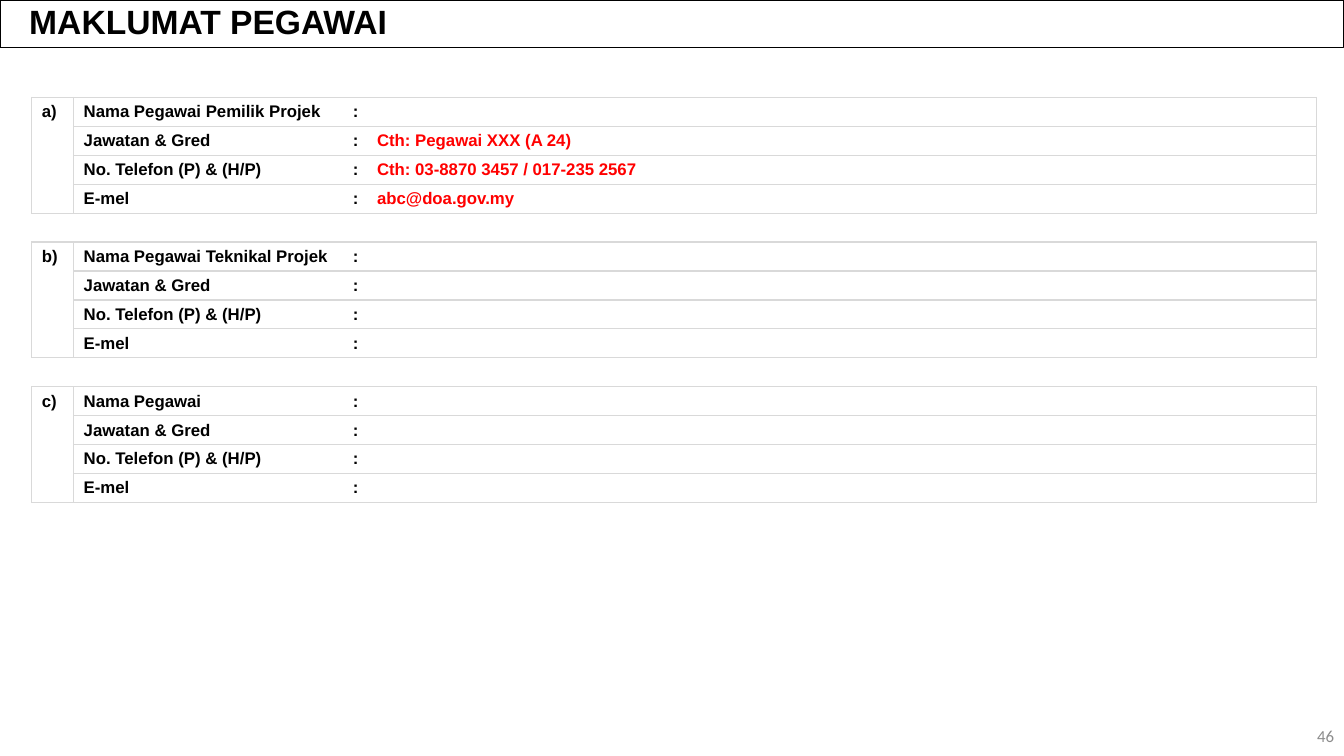
import dataclasses

import pptx
import pptx.dml.color
import pptx.enum.text
import pptx.oxml.ns
import pptx.util
from lxml import etree

Pt = pptx.util.Pt
RGBColor = pptx.dml.color.RGBColor
Align = pptx.enum.text.PP_ALIGN
Anchor = pptx.enum.text.MSO_ANCHOR


@dataclasses.dataclass(frozen=True)
class Theme:
    heading_font: str = "Arial"
    number_font: str = "Calibri"
    title_size: int = 24
    table_size: int = 12
    number_size: int = 12
    black: str = "000000"
    example: str = "FF0000"
    grid: str = "D9D9D9"
    muted: str = "8C8C8C"


THEME = Theme()
SLIDE_WIDTH, SLIDE_HEIGHT = 960, 540
COLUMN_WIDTHS = (29.9, 192.3, 16.6, 678.2)
ROW_HEIGHT = 20.69
OFFICERS = [
    ("a)", "Nama Pegawai Pemilik Projek",
     ("", "Cth: Pegawai XXX (A 24)", "Cth: 03-8870 3457 / 017-235 2567", "abc@doa.gov.my")),
    ("b)", "Nama Pegawai Teknikal Projek", ("",) * 4),
    ("c)", "Nama Pegawai", ("",) * 4),
]
COMMON_LABELS = ("Jawatan & Gred", "No. Telefon (P) & (H/P)", "E-mel")


def set_attributes(target, values):
    for name, value in values.items():
        setattr(target, name, value)


def write_text(paragraph, text, font, size, color, bold=False):
    run = paragraph.add_run()
    run.text = text
    set_attributes(run.font, {"name": font, "size": Pt(size), "bold": bold})
    run.font.color.rgb = RGBColor.from_string(color)


def add_title(slide, left, top, width, height):
    title = slide.shapes.title
    set_attributes(title, {"left": Pt(left), "top": Pt(top),
                           "width": Pt(width), "height": Pt(height)})
    title.line.color.rgb = RGBColor.from_string(THEME.black)
    title.line.width = Pt(0.75)
    set_attributes(title.text_frame, {
        "vertical_anchor": Anchor.MIDDLE, "word_wrap": True,
        "auto_size": pptx.enum.text.MSO_AUTO_SIZE.NONE})
    paragraph = title.text_frame.paragraphs[0]
    set_attributes(paragraph, {"alignment": Align.LEFT, "line_spacing": 0.9})
    paragraph._p.get_or_add_pPr().set("indent", str(Pt(13.7)))
    write_text(paragraph, "MAKLUMAT PEGAWAI", THEME.heading_font,
               THEME.title_size, THEME.black, bold=True)


def add_page_number(slide, left, top, width, height):
    box = slide.shapes.add_textbox(Pt(left), Pt(top), Pt(width), Pt(height))
    set_attributes(box.text_frame, {"word_wrap": True, "vertical_anchor": Anchor.MIDDLE})
    paragraph = box.text_frame.paragraphs[0]
    paragraph.alignment = Align.RIGHT
    write_text(paragraph, "46", THEME.number_font, THEME.number_size, THEME.muted)


def set_borders(cell, sides):
    """Draw the sides named by the letters L, R, T and B, and clear the others."""
    properties = cell._tc.get_or_add_tcPr()
    qn = pptx.oxml.ns.qn
    for side in "LRTB":
        line = etree.SubElement(properties, qn(f"a:ln{side}"), w=str(Pt(1)))
        if side in sides:
            fill = etree.SubElement(line, qn("a:solidFill"))
            etree.SubElement(fill, qn("a:srgbClr"), val=THEME.grid)
        else:
            etree.SubElement(line, qn("a:noFill"))


def fill_cell(cell, text, sides, color):
    set_borders(cell, sides)
    cell.fill.background()
    set_attributes(cell, {"vertical_anchor": Anchor.MIDDLE,
                          "margin_top": Pt(3), "margin_bottom": Pt(3)})
    paragraph = cell.text_frame.paragraphs[0]
    if text:
        write_text(paragraph, text, THEME.heading_font, THEME.table_size, color, bold=True)
    else:
        end = etree.SubElement(paragraph._p, pptx.oxml.ns.qn("a:endParaRPr"),
                               sz=str(THEME.table_size * 100))
        etree.SubElement(end, pptx.oxml.ns.qn("a:latin"), typeface=THEME.heading_font)


def officer_rows():
    """Return the texts and border sides of each table row."""
    rows = []
    for letter, name_label, values in OFFICERS:
        if rows:
            rows.append((("",) * 4, ("TB",) * 4))
        labels = (name_label, *COMMON_LABELS)
        for index, (label, value) in enumerate(zip(labels, values)):
            first, last = index == 0, index == len(labels) - 1
            letter_sides = "LR" + "T" * first + "B" * last
            rows.append(((letter if first else "", label, ":", value),
                         (letter_sides, "LTB", "TB", "RTB")))
    return rows


def add_officer_table(slide, left, top):
    rows = officer_rows()
    frame = slide.shapes.add_table(
        len(rows), len(COLUMN_WIDTHS), Pt(left), Pt(top),
        Pt(sum(COLUMN_WIDTHS)), Pt(ROW_HEIGHT * len(rows)))
    table = frame.table
    set_attributes(table, {"first_row": False, "horz_banding": False})
    for column, width in zip(table.columns, COLUMN_WIDTHS):
        column.width = Pt(width)
    for row, (texts, borders) in zip(table.rows, rows):
        row.height = Pt(ROW_HEIGHT)
        colors = (THEME.black,) * 3 + (THEME.example,)
        for cell, text, sides, color in zip(row.cells, texts, borders, colors):
            fill_cell(cell, text, sides, color)


def main():
    presentation = pptx.Presentation()
    set_attributes(presentation, {"slide_width": Pt(SLIDE_WIDTH),
                                  "slide_height": Pt(SLIDE_HEIGHT)})
    slide = presentation.slides.add_slide(presentation.slide_layouts.get_by_name("Title Only"))
    add_title(slide, 0, 0, SLIDE_WIDTH, 34)
    add_page_number(slide, SLIDE_WIDTH - 216, 511.5, 216, 28.5)
    add_officer_table(slide, 22.7, 69.6)
    presentation.save("out.pptx")


if __name__ == "__main__":
    main()
